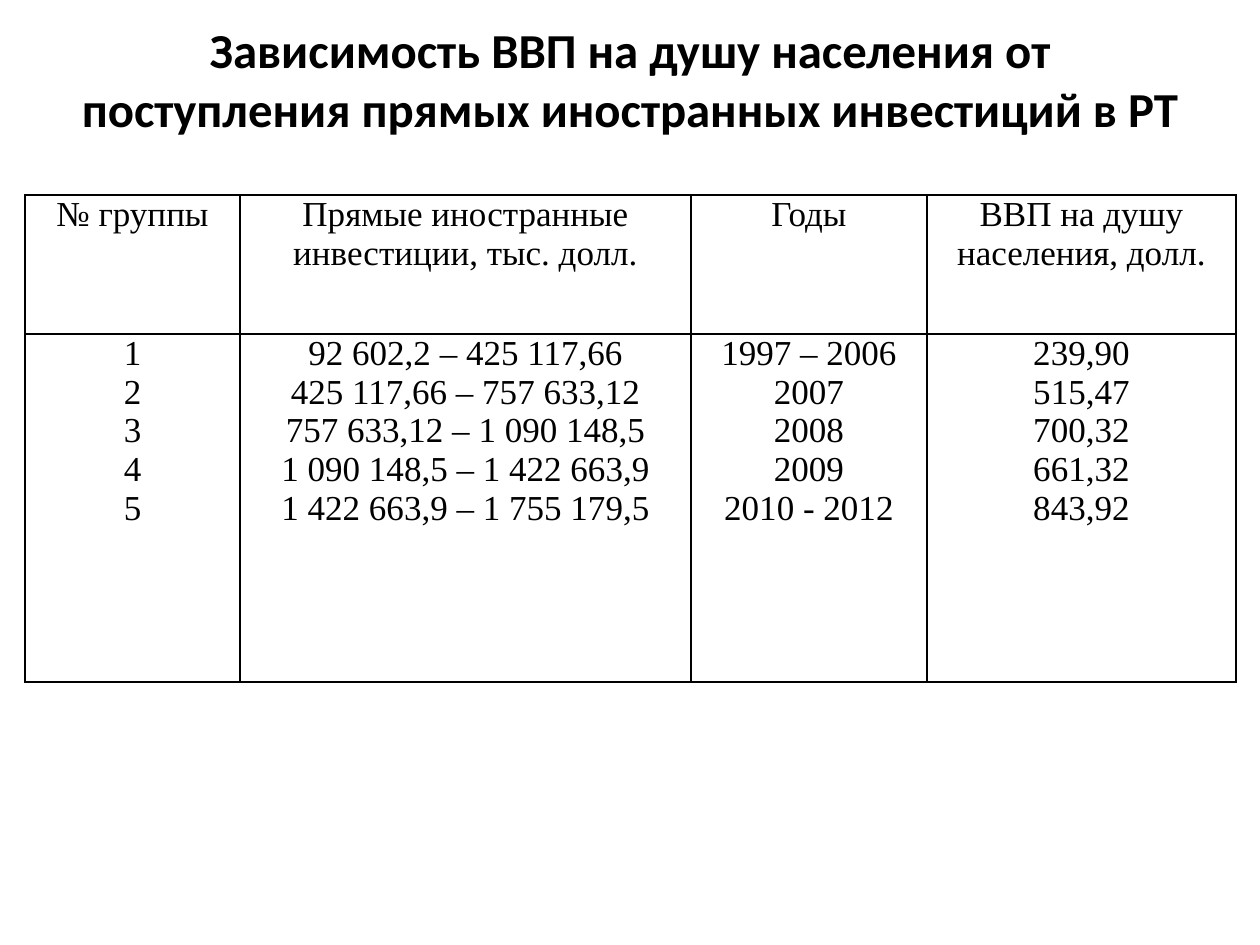
from dataclasses import dataclass

from lxml.etree import SubElement
from pptx import Presentation
from pptx.dml.color import RGBColor
from pptx.enum.text import MSO_ANCHOR, PP_ALIGN as Align
from pptx.oxml.ns import qn
from pptx.slide import Slide
from pptx.table import _Cell as Cell
from pptx.text.text import TextFrame
from pptx.util import Emu, Pt


@dataclass(frozen=True)
class Theme:
    ink: str = "000000"
    head_font: str = "Calibri"
    body_font: str = "Times New Roman"
    head_size: float = 27.9
    body_size: float = 20
    rule: float = 1


@dataclass(frozen=True)
class Column:
    width: int
    head: str
    values: tuple[str, ...]


THEME = Theme()
TITLE = "Зависимость ВВП на душу населения от поступления прямых иностранных инвестиций в РТ"
ROWS = (139, 348)
COLUMNS = (
    Column(215, "№ группы", ("1", "2", "3", "4", "5")),
    Column(451, "Прямые иностранные инвестиции, тыс. долл.", (
        "92 602,2 – 425 117,66",
        "425 117,66 – 757 633,12",
        "757 633,12 – 1 090 148,5",
        "1 090 148,5 – 1 422 663,9",
        "1 422 663,9 – 1 755 179,5",
    )),
    Column(236, "Годы", ("1997 – 2006", "2007", "2008", "2009", "2010 - 2012")),
    Column(309, "ВВП на душу населения, долл.",
           ("239,90", "515,47", "700,32", "661,32", "843,92")),
)


def px(count: int) -> Emu:
    return Emu(round(count * 914400 / 126))


def write(frame: TextFrame, lines: tuple[str, ...], font: str,
          size: float, bold: bool = False) -> None:
    """Fill a frame with centred lines, one paragraph each."""
    frame.text = "\n".join(lines)
    for para in frame.paragraphs:
        para.alignment = Align.CENTER
        para.font.name = font
        para.font.size = Pt(size)
        para.font.bold = bold
        para.font.color.rgb = RGBColor.from_string(THEME.ink)


def border(cell: Cell) -> None:
    props = cell._tc.get_or_add_tcPr()
    for side in ("lnL", "lnR", "lnT", "lnB"):
        line = SubElement(props, qn(f"a:{side}"), w=str(Pt(THEME.rule)))
        fill = SubElement(line, qn("a:solidFill"))
        SubElement(fill, qn("a:srgbClr"), val=THEME.ink)


def fill_cell(cell: Cell, lines: tuple[str, ...]) -> None:
    cell.margin_left = cell.margin_right = px(9)
    cell.margin_top = cell.margin_bottom = 0
    cell.vertical_anchor = MSO_ANCHOR.TOP
    border(cell)
    cell.fill.background()
    write(cell.text_frame, lines, THEME.body_font, THEME.body_size)


def add_title(slide: Slide) -> None:
    frame = slide.shapes.add_textbox(px(63), px(20), px(1134), px(175)).text_frame
    frame.word_wrap = True
    frame.margin_top = frame.margin_bottom = 0
    write(frame, (TITLE,), THEME.head_font, THEME.head_size, bold=True)


def add_grid(slide: Slide) -> None:
    width = sum(col.width for col in COLUMNS)
    table = slide.shapes.add_table(len(ROWS), len(COLUMNS), px(25), px(195),
                                   px(width), px(sum(ROWS))).table
    table.first_row = table.horz_banding = False
    for row, height in zip(table.rows, ROWS):
        row.height = px(height)
    for spot, col in enumerate(COLUMNS):
        table.columns[spot].width = px(col.width)
        fill_cell(table.cell(0, spot), (col.head,))
        fill_cell(table.cell(1, spot), col.values)


def main() -> None:
    deck = Presentation()
    deck.slide_width, deck.slide_height = px(1260), px(945)
    slide = deck.slides.add_slide(deck.slide_layouts[6])
    add_title(slide)
    add_grid(slide)
    deck.save("out.pptx")


if __name__ == "__main__":
    main()
